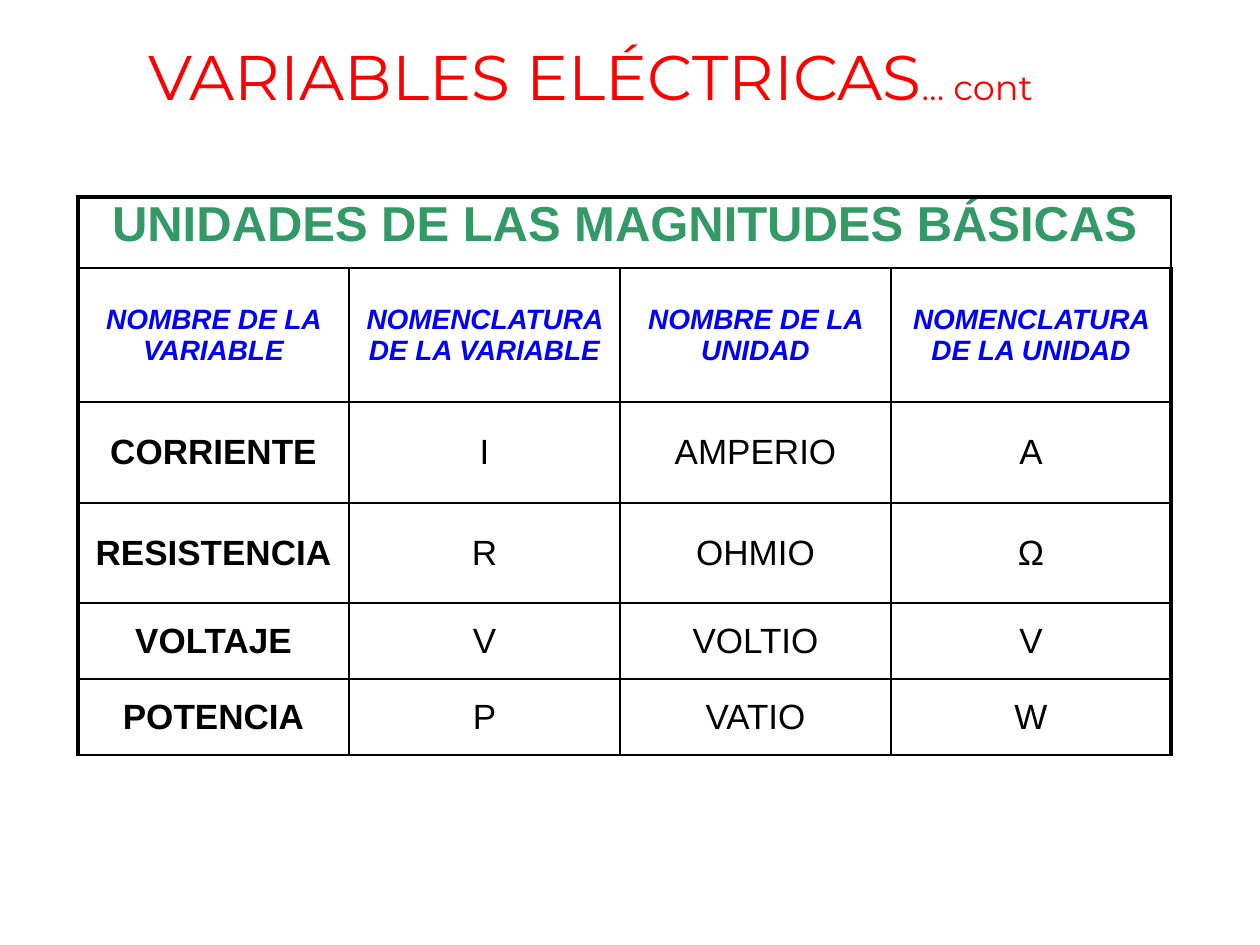
"""Build a slide with a table of basic electrical units."""
from dataclasses import dataclass
from lxml.etree import SubElement
from pptx import Presentation
from pptx.dml.color import RGBColor
from pptx.enum.text import MSO_ANCHOR, PP_ALIGN
from pptx.oxml.ns import qn
from pptx.util import Pt

TITLE = [("VARIABLES ELÉCTRICAS", "title"), ("… cont", "cont")]
ROWS = [
    ["UNIDADES DE LAS MAGNITUDES BÁSICAS", "", "", ""],
    ["NOMBRE DE LA VARIABLE", "NOMENCLATURA DE LA VARIABLE",
     "NOMBRE DE LA UNIDAD", "NOMENCLATURA DE LA UNIDAD"],
    ["CORRIENTE", "I", "AMPERIO", "A"],
    ["RESISTENCIA", "R", "OHMIO", "Ω"],
    ["VOLTAJE", "V", "VOLTIO", "V"],
    ["POTENCIA", "P", "VATIO", "W"],
]
WIDTHS = [271, 271, 271, 280]
HEIGHTS = [71, 134, 101, 100, 76, 76]
TABLE_AT = (78, 197, sum(WIDTHS), sum(HEIGHTS))
TITLE_AT = (29, 29, 1123, 90)


@dataclass(frozen=True)
class Theme:
    red: str = "FF0000"
    green: str = "339966"
    blue: str = "0000FF"
    black: str = "000000"
    head: str = "Montserrat"
    body: str = "Arial"
    thin: float = 1
    thick: float = 2.25


LOOK = Theme()
STYLES = {
    "title": (LOOK.red, dict(name=LOOK.head, size=Pt(36), bold=False)),
    "cont": (LOOK.red, dict(name=LOOK.head, size=Pt(20), bold=False)),
    "band": (LOOK.green, dict(name=LOOK.body, size=Pt(28), bold=True)),
    "label": (LOOK.blue, dict(name=LOOK.body, size=Pt(16), bold=True, italic=True)),
    "name": (LOOK.black, dict(name=LOOK.body, size=Pt(20), bold=True)),
    "value": (LOOK.black, dict(name=LOOK.body, size=Pt(20), bold=False)),
}


def px(n):
    return n * 914400 // 126


def assign(item, values):
    for key, value in values.items():
        setattr(item, key, value)


def write(para, runs):
    para.alignment = PP_ALIGN.CENTER
    for text, style in runs:
        run = para.add_run()
        run.text = text
        color, font = STYLES[style]
        assign(run.font, font)
        run.font.color.rgb = RGBColor.from_string(color)


def border(cell, row, col):
    outer = {"L": col == 0, "R": col == len(WIDTHS) - 1, "T": row == 0, "B": False}
    for side, edge in outer.items():
        width = LOOK.thick if edge else LOOK.thin
        line = SubElement(cell._tc.get_or_add_tcPr(), qn(f"a:ln{side}"), w=str(Pt(width)))
        fill = SubElement(line, qn("a:solidFill"))
        SubElement(fill, qn("a:srgbClr"), val=LOOK.black)


def add_title(slide):
    frame = slide.shapes.add_textbox(*map(px, TITLE_AT)).text_frame
    assign(frame, dict(word_wrap=True, vertical_anchor=MSO_ANCHOR.BOTTOM))
    write(frame.paragraphs[0], TITLE)


def add_units(slide):
    table = slide.shapes.add_table(len(ROWS), len(WIDTHS), *map(px, TABLE_AT)).table
    assign(table, dict(first_row=False, horz_banding=False))
    for col, width in zip(table.columns, WIDTHS):
        col.width = px(width)
    for row, height in zip(table.rows, HEIGHTS):
        row.height = px(height)
    table.cell(0, 0).merge(table.cell(0, len(WIDTHS) - 1))
    for r, texts in enumerate(ROWS):
        for c, text in enumerate(texts):
            cell = table.cell(r, c)
            border(cell, r, c)
            cell.fill.background()
            anchor = MSO_ANCHOR.MIDDLE if r else MSO_ANCHOR.TOP
            assign(cell, dict(margin_left=px(6), margin_right=px(6), margin_top=0,
                              margin_bottom=0, vertical_anchor=anchor))
            style = ("band", "label")[r] if r < 2 else "value" if c else "name"
            if text:
                write(cell.text_frame.paragraphs[0], [(text, style)])


def main():
    deck = Presentation()
    assign(deck, dict(slide_width=px(1260), slide_height=px(945)))
    slide = deck.slides.add_slide(deck.slide_layouts[6])
    add_title(slide)
    add_units(slide)
    deck.save("out.pptx")


if __name__ == "__main__":
    main()
